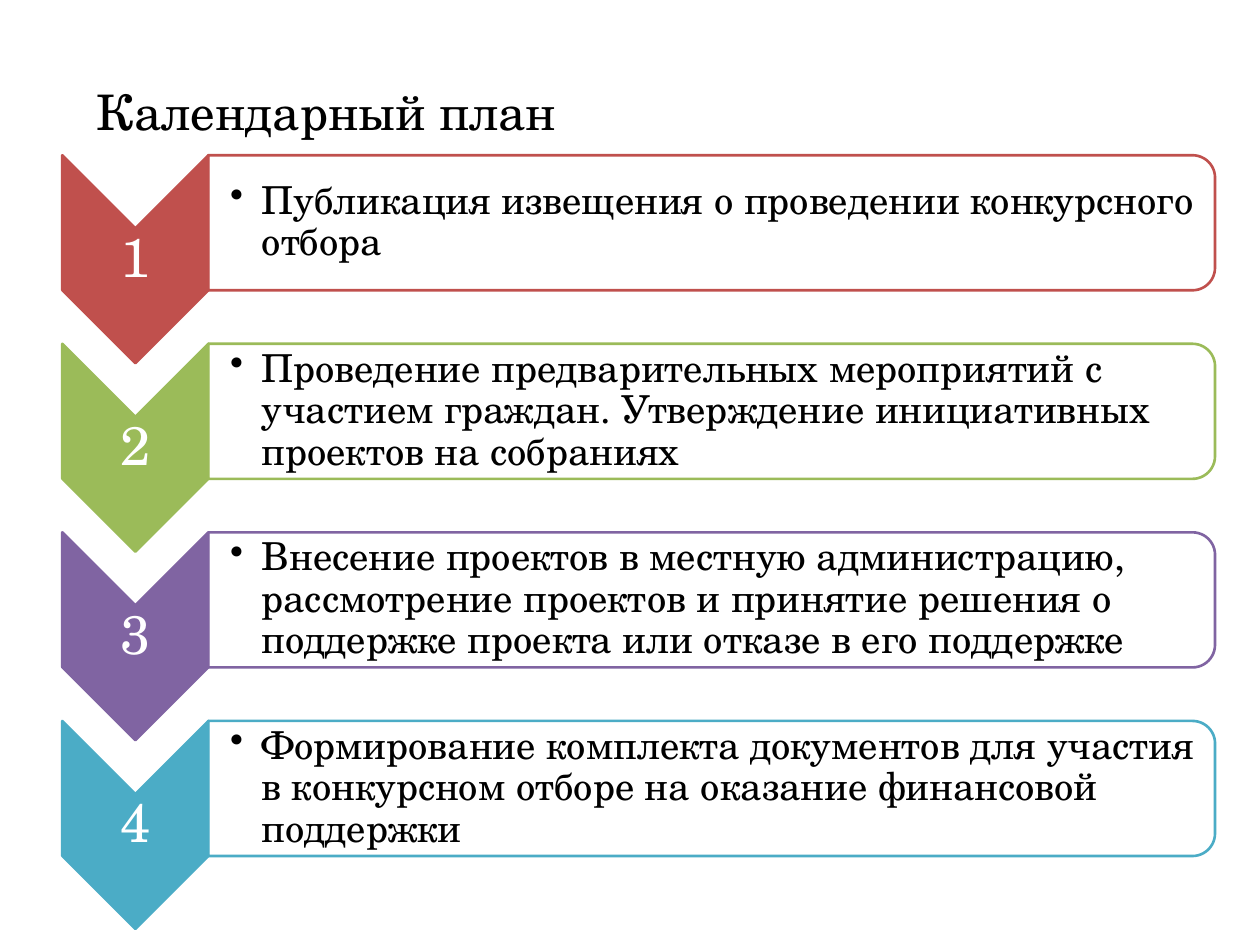
import pptx
import pptx.dml.color
import pptx.enum.shapes
import pptx.enum.text
import pptx.oxml.ns
import pptx.util
from lxml import etree

Pt = pptx.util.Pt
SHAPES = pptx.enum.shapes.MSO_SHAPE
ANCHOR = pptx.enum.text.MSO_ANCHOR
ALIGN = pptx.enum.text.PP_ALIGN
FONT = "TeX Gyre Schola"
FIRST_TOP = 88.7
STEP_PITCH = 107.75
STEPS = [
    ("C0504D", "Публикация извещения о проведении конкурсного отбора"),
    ("9BBB59", "Проведение предварительных мероприятий с участием граждан. "
               "Утверждение инициативных проектов на собраниях"),
    ("8064A2", "Внесение проектов в местную администрацию, рассмотрение проектов "
               "и принятие решения о поддержке проекта или отказе в его поддержке"),
    ("4BACC6", "Формирование комплекта документов для участия в конкурсном отборе "
               "на оказание финансовой поддержки"),
]


def color(value):
    return pptx.dml.color.RGBColor.from_string(value)


def add_child(parent, tag, **attributes):
    return etree.SubElement(parent, pptx.oxml.ns.qn(tag), **attributes)


def add_span(para, text, size, ink):
    span = para.add_run()
    span.text = text
    span.font.name = FONT
    span.font.size = Pt(size)
    span.font.color.rgb = color(ink)


def set_margins(frame, left, top, right, bottom):
    frame.margin_left, frame.margin_top = Pt(left), Pt(top)
    frame.margin_right, frame.margin_bottom = Pt(right), Pt(bottom)


def add_title(page, text):
    title = page.shapes.title
    title.left, title.top, title.width, title.height = Pt(48), Pt(43.2), Pt(648), Pt(56)
    frame = title.text_frame
    frame.auto_size = pptx.enum.text.MSO_AUTO_SIZE.NONE
    frame.word_wrap = True
    frame.vertical_anchor = ANCHOR.TOP
    set_margins(frame, 7.2, 3.6, 7.2, 3.6)
    para = frame.paragraphs[0]
    para.alignment = ALIGN.LEFT
    add_span(para, text, 28, "000000")


def add_turned_shape(page, kind, left, top, width, height, fill, line):
    shift = (width - height) / 2
    shape = page.shapes.add_shape(
        kind, Pt(left + shift), Pt(top - shift), Pt(height), Pt(width))
    shape.rotation = 90
    shape.shadow.inherit = False
    shape.fill.solid()
    shape.fill.fore_color.rgb = color(fill)
    shape.line.color.rgb = color(line)
    shape.line.width = Pt(1.5)
    return shape


def make_translucent(shape, percent):
    tint = shape._element.spPr.find(
        pptx.oxml.ns.qn("a:solidFill")).find(pptx.oxml.ns.qn("a:srgbClr"))
    add_child(tint, "a:alpha", val=str(percent * 1000))


def add_label(page, left, top, width, height, text, size, ink, inset=1.4):
    box = page.shapes.add_textbox(Pt(left), Pt(top), Pt(width), Pt(height))
    frame = box.text_frame
    frame.word_wrap = True
    frame.vertical_anchor = ANCHOR.MIDDLE
    set_margins(frame, inset, 1.4, 1.4, 1.4)
    para = frame.paragraphs[0]
    para.line_spacing = 0.9
    add_span(para, text, size, ink)
    return para


def set_bullet(para, indent):
    para.level = 1
    properties = para._p.get_or_add_pPr()
    properties.set("marL", str(Pt(indent)))
    properties.set("indent", str(Pt(-indent)))
    add_child(properties, "a:buChar", char="•")


def add_step(page, number, top, accent, text):
    add_turned_shape(page, SHAPES.CHEVRON, 35.6, top, 83.5, 118.8, accent, accent)
    digit = add_label(page, 35.6, top + 41.7, 83.5, 36, str(number), 31, "FFFFFF")
    digit.alignment = ALIGN.CENTER
    bar = add_turned_shape(page, SHAPES.ROUND_2_SAME_RECTANGLE,
                           119, top, 575.3, 77.2, "FFFFFF", accent)
    make_translucent(bar, 90)
    item = add_label(page, 119.2, top + 3.7, 571.7, 69.8, text, 22, "000000", 12.3)
    set_bullet(item, 18)


def main():
    deck = pptx.Presentation()
    deck.slide_width, deck.slide_height = Pt(720), Pt(540)
    page = deck.slides.add_slide(deck.slide_layouts[5])
    add_title(page, "Календарный план")
    for index, (accent, text) in enumerate(STEPS):
        add_step(page, index + 1, FIRST_TOP + index * STEP_PITCH, accent, text)
    deck.save("out.pptx")


if __name__ == "__main__":
    main()
